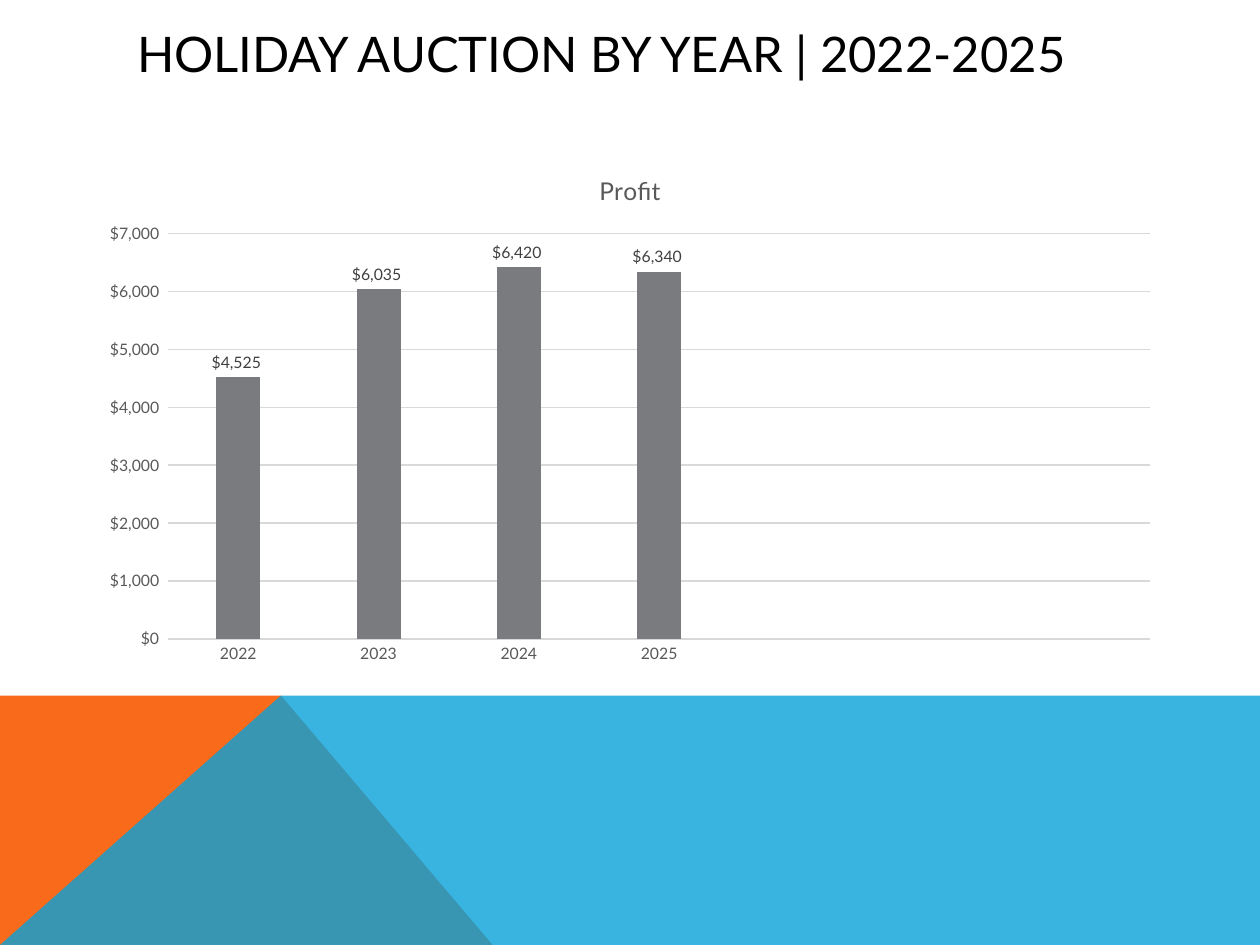
import pptx
import pptx.chart.data
import pptx.dml.color
import pptx.enum.chart
import pptx.enum.text
import pptx.oxml
import pptx.util
from pptx.util import Inches

COLORS = {
    "orange": "F96A1B",
    "blue": "08A1D9",
    "title": "000000",
    "bar": "797B7E",
    "axis": "595959",
    "label": "404040",
    "grid": "D9D9D9",
}
FONT = "Lato"
CURRENCY = '"$"#,##0_);[Red]\\("$"#,##0\\)'


def rgb(name):
    return pptx.dml.color.RGBColor.from_string(COLORS[name])


def style_font(font, size, color):
    font.name = FONT
    font.size = pptx.util.Pt(size)
    font.bold = False
    font.color.rgb = rgb(color)


prs = pptx.Presentation()
prs.slide_width = Inches(10)
prs.slide_height = Inches(7.5)
s = prs.slides.add_slide(prs.slide_layouts[6])

# Bottom band: an orange wedge under a translucent blue panel
top, bottom, peak = 5.52, 7.5, 2.23
bands = [
    ("orange", 100, [(0, bottom), (0, top), (peak, top), (3.91, bottom)]),
    ("blue", 80, [(0, bottom), (peak, top), (10, top), (10, bottom)]),
]
for color, opacity, points in bands:
    points = [(Inches(x), Inches(y)) for x, y in points]
    builder = s.shapes.build_freeform(*points[0])
    builder.add_line_segments(points[1:], close=True)
    sp = builder.convert_to_shape()
    sp.shadow.inherit = False
    sp.fill.solid()
    sp.fill.fore_color.rgb = rgb(color)
    sp.line.fill.background()
    if opacity < 100:
        fill_color = sp.fill._xPr.find(".//" + pptx.oxml.ns.qn("a:srgbClr"))
        alpha = pptx.oxml.xmlchemy.OxmlElement("a:alpha")
        alpha.set("val", str(opacity * 1000))
        fill_color.append(alpha)

# Slide title
sp = s.shapes.add_textbox(Inches(0.99), Inches(0.14), Inches(8.7), Inches(0.57))
tf = sp.text_frame
tf.word_wrap = True
tf.auto_size = pptx.enum.text.MSO_AUTO_SIZE.SHAPE_TO_FIT_TEXT
tf.text = "HOLIDAY AUCTION BY YEAR | 2022-2025"
style_font(tf.paragraphs[0].runs[0].font, 28, "title")

# Profit chart, with three empty slots for later years
data = pptx.chart.data.CategoryChartData(number_format=CURRENCY)
data.categories = ["2022", "2023", "2024", "2025", "", "", ""]
data.add_series("Series 1", [4525, 6035, 6420, 6340, None, None, None])
chart = s.shapes.add_chart(
    pptx.enum.chart.XL_CHART_TYPE.COLUMN_CLUSTERED,
    Inches(0.7), Inches(1.2), Inches(8.6), Inches(4.15), data,
).chart
style_font(chart.font, 10, "title")
chart.has_legend = False
chart.has_title = True
tf = chart.chart_title.text_frame
tf.text = "Profit"
style_font(tf.paragraphs[0].runs[0].font, 14, "axis")
chart.chart_title.include_in_layout = False

plot = chart.plots[0]
plot.gap_width = 219
plot.overlap = -27
plot.vary_by_categories = False
series = plot.series[0]
series.format.fill.solid()
series.format.fill.fore_color.rgb = rgb("bar")
labels = series.data_labels
labels.show_value = True
labels.position = pptx.enum.chart.XL_LABEL_POSITION.OUTSIDE_END
labels.number_format = CURRENCY
labels.number_format_is_linked = False
style_font(labels.font, 9, "label")

for axis in (chart.category_axis, chart.value_axis):
    axis.major_tick_mark = pptx.enum.chart.XL_TICK_MARK.NONE
    axis.minor_tick_mark = pptx.enum.chart.XL_TICK_MARK.NONE
    style_font(axis.tick_labels.font, 9, "axis")

value_axis = chart.value_axis
value_axis.minimum_scale = 0
value_axis.maximum_scale = 7000
value_axis.major_unit = 1000
value_axis.tick_labels.number_format = CURRENCY
value_axis.tick_labels.number_format_is_linked = False
value_axis.format.line.fill.background()
value_axis.has_major_gridlines = True
for line in (chart.category_axis.format.line, value_axis.major_gridlines.format.line):
    line.color.rgb = rgb("grid")
    line.width = pptx.util.Pt(0.75)

prs.save("out.pptx")
